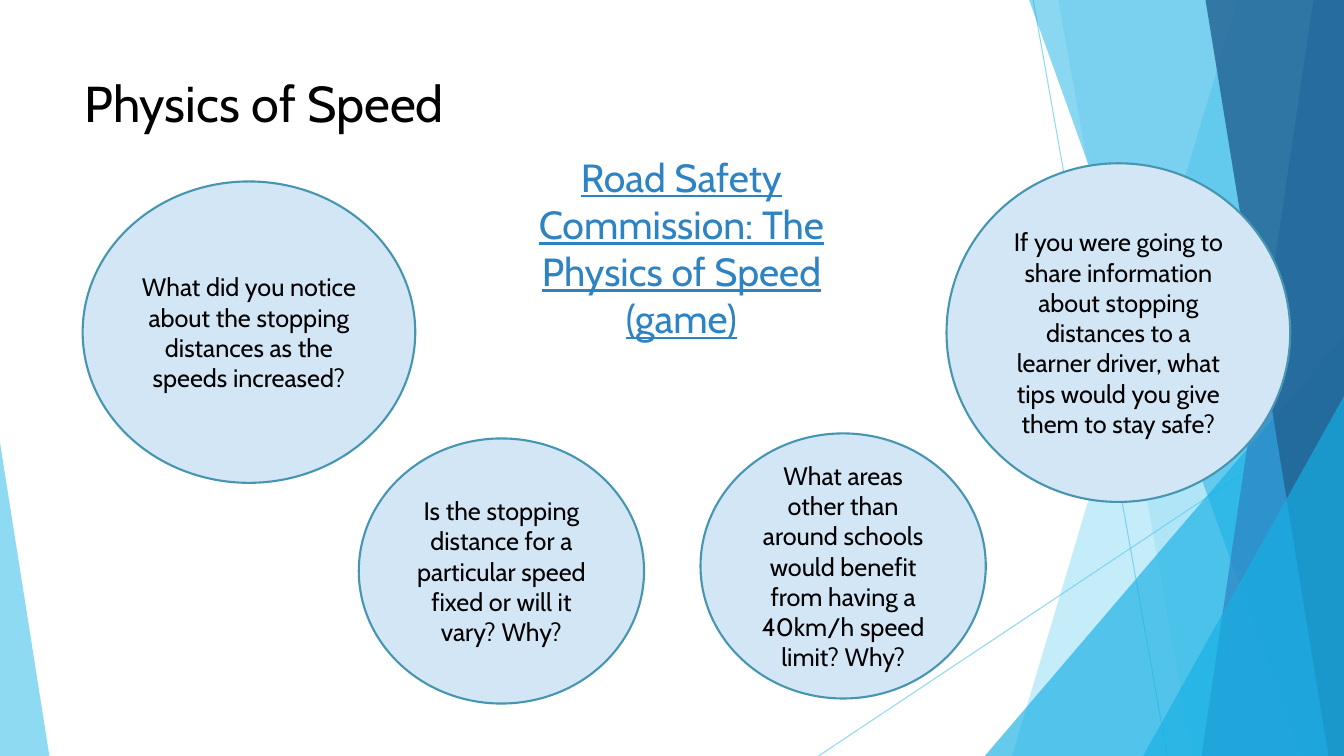
"""Build the Physics of Speed slide on a grid of 40 columns by 22.5 rows."""
from dataclasses import dataclass

from lxml.etree import SubElement as Sub
from pptx import Presentation
from pptx.dml.color import RGBColor
from pptx.enum.shapes import MSO_CONNECTOR as Link, MSO_SHAPE as Form
from pptx.enum.text import MSO_ANCHOR as Anchor, PP_ALIGN as Align
from pptx.oxml.ns import qn
from pptx.shapes.autoshape import Shape
from pptx.slide import Slide
from pptx.text.text import TextFrame as Frame
from pptx.util import Emu, Pt

CELL = 304800
COLS, ROWS = 40, 22.5
FONT = "Cabin"
BLACK = RGBColor(0x00, 0x00, 0x00)
SKY = RGBColor(0x5F, 0xCB, 0xEF)
AQUA = RGBColor(0x17, 0xB0, 0xE4)
BLUE = RGBColor(0x2E, 0x83, 0xC3)
NAVY = RGBColor(0x22, 0x62, 0x92)
PALE = RGBColor(0xD3, 0xE6, 0xF5)
TEAL = RGBColor(0x46, 0x96, 0xB1)


@dataclass(frozen=True)
class Box:
    col: float
    row: float
    wide: float
    high: float

    def emus(self) -> tuple[Emu, ...]:
        return tuple(map(grid, (self.col, self.row, self.wide, self.high)))


@dataclass(frozen=True)
class Ray:
    col: float
    row: float
    end: float


@dataclass(frozen=True)
class Band:
    top: float
    foot: float
    tint: RGBColor
    alpha: int


@dataclass(frozen=True)
class Wedge:
    left: float
    right: float
    row: float
    peak: int
    tint: RGBColor
    alpha: int


@dataclass(frozen=True)
class Bubble:
    box: Box
    words: str


RAYS = (Ray(30.75, 0, 34.74), Ray(COLS, 12.09, 24.36))
PANES = (
    Band(36.84, 30.12, SKY, 36),
    Band(31.5, 35.49, SKY, 20),
    Wedge(29.31, COLS, 9.99, 1, AQUA, 66),
    Band(30.63, 38.73, AQUA, 50),
    Band(39.09, 35.76, BLUE, 70),
    Band(35.88, 39.54, NAVY, 80),
    Wedge(34.02, COLS, 11.79, 1, AQUA, 66),
    Wedge(0, 1.47, 13.17, 0, SKY, 70),
)
TITLE = Box(2.22, 2.01, 28.2, 4.32)
GAME = Box(14.49, 4.41, 11.58, 5.97)
BUBBLES = (
    Bubble(Box(2.46, 5.4, 9.9, 8.97),
           "What did you notice about the stopping distances as the speeds increased?"),
    Bubble(Box(28.17, 4.86, 10.23, 10.08),
           "If you were going to share information about stopping distances to a "
           "learner driver, what tips would you give them to stay safe?"),
    Bubble(Box(20.85, 12.9, 8.49, 7.89),
           "What areas other than around schools would benefit from having a "
           "40km/h speed limit? Why?"),
    Bubble(Box(10.68, 13.05, 8.49, 7.89),
           "Is the stopping distance for a particular speed fixed or will it vary? Why?"),
)


def grid(cells: float) -> Emu:
    return Emu(round(cells * CELL))


def fade(part, alpha: int) -> None:
    for tint in part.iter(qn("a:srgbClr")):
        Sub(tint, qn("a:alpha"), val=str(alpha * 1000))


def paint(shape: Shape, tint: RGBColor) -> None:
    shape.shadow.inherit = False
    shape.fill.solid()
    shape.fill.fore_color.rgb = tint


def write(frame: Frame, words: str, size: int, tint: RGBColor = BLACK,
          align: Align = Align.CENTER, under: bool = False) -> None:
    frame.word_wrap = True
    para = frame.paragraphs[0]
    para.alignment = align
    run = para.add_run()
    run.text = words
    font = run.font
    font.name, font.size, font.color.rgb = FONT, Pt(size), tint
    if under:
        font.underline = True


def draw_ray(slide: Slide, ray: Ray) -> None:
    line = slide.shapes.add_connector(
        Link.STRAIGHT, grid(ray.col), grid(ray.row), grid(ray.end), grid(ROWS))
    line.line.color.rgb = SKY
    line.line.width = Pt(0.75)
    props = line._element.spPr
    fade(props, 70)
    Sub(props, qn("a:effectLst"))


def draw_pane(slide: Slide, pane: Band | Wedge) -> None:
    if isinstance(pane, Band):
        pen = slide.shapes.build_freeform(grid(pane.top), 0)
        pen.add_line_segments(
            [(grid(COLS), 0), (grid(COLS), grid(ROWS)), (grid(pane.foot), grid(ROWS))])
        shape = pen.convert_to_shape()
    else:
        box = Box(pane.left, pane.row, pane.right - pane.left, ROWS - pane.row)
        shape = slide.shapes.add_shape(Form.ISOSCELES_TRIANGLE, *box.emus())
        shape.adjustments[0] = pane.peak
    paint(shape, pane.tint)
    shape.line.fill.background()
    fade(shape._element.spPr, pane.alpha)


def draw_bubble(slide: Slide, bubble: Bubble) -> None:
    shape = slide.shapes.add_shape(Form.OVAL, *bubble.box.emus())
    paint(shape, PALE)
    shape.line.color.rgb = TEAL
    shape.line.width = Pt(1.5)
    shape.text_frame.vertical_anchor = Anchor.MIDDLE
    write(shape.text_frame, bubble.words, 18)


def main() -> None:
    deck = Presentation()
    deck.slide_width, deck.slide_height = grid(COLS), grid(ROWS)
    slide = deck.slides.add_slide(deck.slide_layouts[6])
    for ray in RAYS:
        draw_ray(slide, ray)
    for pane in PANES:
        draw_pane(slide, pane)
    title = slide.shapes.add_textbox(*TITLE.emus())
    write(title.text_frame, "Physics of Speed", 36, align=Align.LEFT)
    game = slide.shapes.add_textbox(*GAME.emus())
    write(game.text_frame, "Road Safety Commission: The Physics of Speed (game)",
          28, BLUE, under=True)
    for bubble in BUBBLES:
        draw_bubble(slide, bubble)
    deck.save("out.pptx")


if __name__ == "__main__":
    main()
